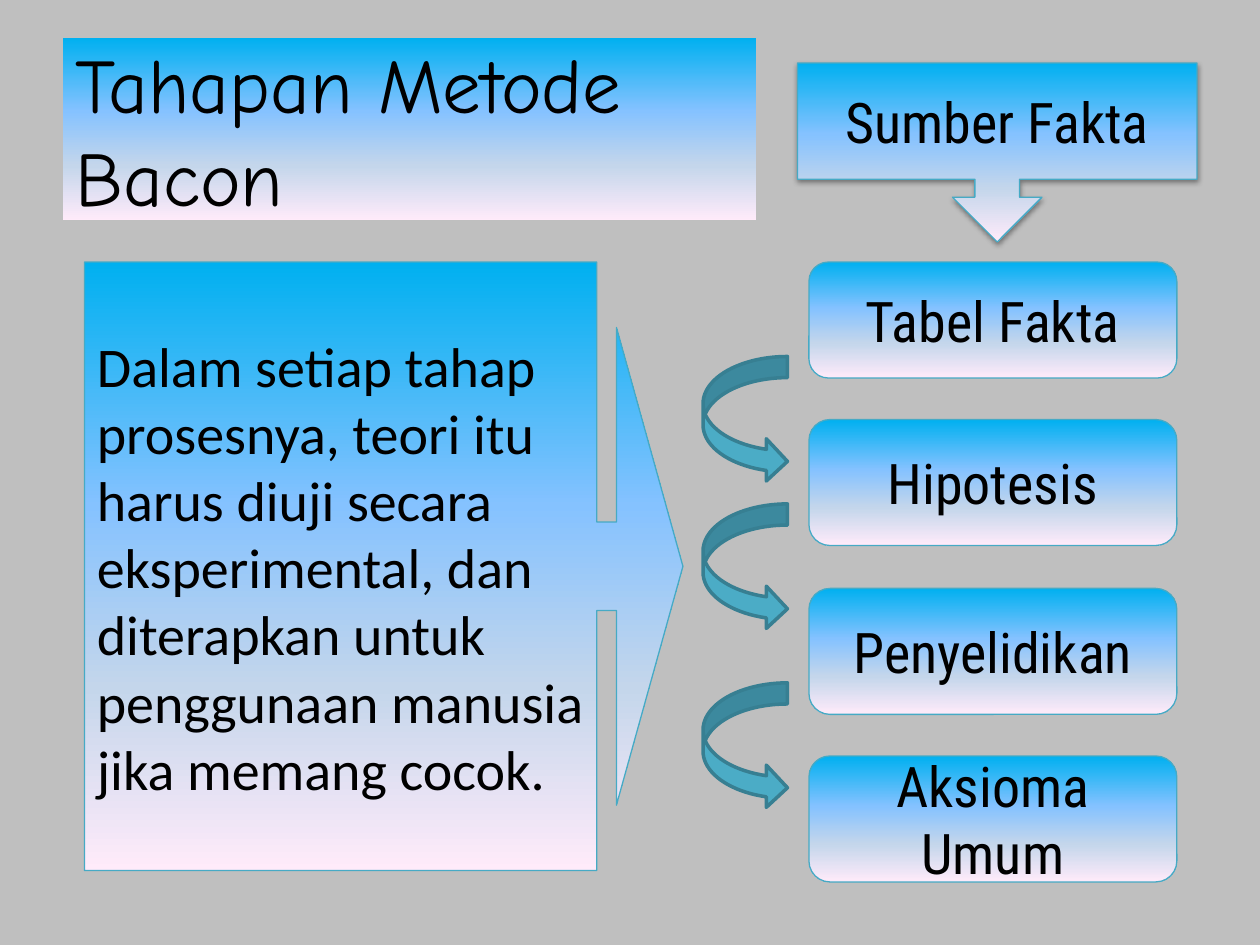
from lxml import etree
from pptx import Presentation
from pptx.dml.color import RGBColor
from pptx.enum.shapes import MSO_SHAPE
from pptx.enum.text import MSO_ANCHOR, MSO_AUTO_SIZE, PP_ALIGN
from pptx.oxml.ns import qn
from pptx.util import Inches, Pt

BOX = MSO_SHAPE.ROUNDED_RECTANGLE
CURVED_ARROW = MSO_SHAPE.CURVED_RIGHT_ARROW
RIGHT_CALLOUT = MSO_SHAPE.RIGHT_ARROW_CALLOUT
DOWN_CALLOUT = MSO_SHAPE.DOWN_ARROW_CALLOUT
LEFT, CENTER = PP_ALIGN.LEFT, PP_ALIGN.CENTER
MIDDLE, NO_FIT = MSO_ANCHOR.MIDDLE, MSO_AUTO_SIZE.NONE

GREY = RGBColor(0xBF, 0xBF, 0xBF)
BLACK = RGBColor(0, 0, 0)
EDGE = RGBColor(0x46, 0xAA, 0xC5)
TEAL = RGBColor(0x4B, 0xAC, 0xC6)
DARK_TEAL = RGBColor(0x37, 0x7F, 0x92)
GRADIENT = [
    (0, RGBColor(0x00, 0xB0, 0xF0)),
    (40, RGBColor(0x85, 0xC2, 0xFF)),
    (70, RGBColor(0xC4, 0xD6, 0xEB)),
    (100, RGBColor(0xFF, 0xEB, 0xFA)),
]

BODY_TEXT = (
    "Dalam setiap tahap prosesnya, teori itu harus diuji secara eksperimental, "
    "dan diterapkan untuk penggunaan manusia jika memang cocok."
)
STAGES = [
    ("Tabel Fakta", 2.08, 0.92),
    ("Hipotesis", 3.33, 1),
    ("Penyelidikan", 4.67, 1),
    ("Aksioma Umum", 6, 1),
]
ARROW_TOPS = [2.83, 4, 5.42]


def add_color(parent, color):
    return etree.SubElement(parent, qn("a:srgbClr"), val=str(color))


class Builder:
    def __init__(self, s, label_font="Roboto Condensed", size=32):
        self.s = s
        self.label_font = label_font
        self.size = size

    def gradient(self, sp):
        """Fill from top to bottom with the four-stop gradient."""
        sp.fill.gradient()
        sp.fill.gradient_angle = 270
        stops = sp._element.spPr.find(".//" + qn("a:gsLst"))
        for stop in list(stops):
            stops.remove(stop)
        for pos, color in GRADIENT:
            add_color(etree.SubElement(stops, qn("a:gs"), pos=str(pos * 1000)), color)

    def shadow(self, sp):
        effects = sp._element.spPr.find(qn("a:effectLst"))
        outer = etree.SubElement(effects, qn("a:outerShdw"), blurRad=str(Pt(3.1)),
                                 dist=str(Pt(1.6)), dir="5400000", rotWithShape="0")
        etree.SubElement(add_color(outer, BLACK), qn("a:alpha"), val="38000")

    def text(self, sp, text, font, size, align):
        tf = sp.text_frame
        tf.word_wrap = True
        tf.auto_size = NO_FIT
        tf.vertical_anchor = MIDDLE
        p = tf.paragraphs[0]
        p.alignment = align
        r = p.add_run()
        r.text = text
        r.font.name = font
        r.font.size = Pt(size)
        r.font.color.rgb = BLACK

    def shape(self, kind, x, y, w, h, line, width):
        sp = self.s.shapes.add_shape(kind, Inches(x), Inches(y), Inches(w), Inches(h))
        sp.shadow.inherit = False
        sp.line.color.rgb = line
        sp.line.width = Pt(width)
        return sp

    def title(self, text, x, y, w, h):
        sp = self.s.shapes.title
        sp.left, sp.top, sp.width, sp.height = (Inches(v) for v in (x, y, w, h))
        self.gradient(sp)
        self.text(sp, text, "Comic Neue", 44, LEFT)

    def panel(self, kind, text, x, y, w, h, font=None, align=CENTER):
        sp = self.shape(kind, x, y, w, h, EDGE, 0.75)
        self.gradient(sp)
        self.text(sp, text, font or self.label_font, self.size, align)
        return sp

    def curved_arrow(self, x, y, w, h):
        sp = self.shape(CURVED_ARROW, x, y, w, h, DARK_TEAL, 2)
        sp.fill.solid()
        sp.fill.fore_color.rgb = TEAL


def main():
    prs = Presentation()
    prs.slide_width, prs.slide_height = Inches(10), Inches(7.5)
    s = prs.slides.add_slide(prs.slide_layouts[5])
    s.background.fill.solid()
    s.background.fill.fore_color.rgb = GREY

    b = Builder(s)
    b.title("Tahapan Metode Bacon", 0.5, 0.3, 5.5, 1.45)
    body = b.panel(RIGHT_CALLOUT, BODY_TEXT, 0.67, 2.08, 4.75, 4.83, "Calibri", LEFT)
    for i, value in enumerate([0.148, 0.399, 0.111, 0.856]):
        body.adjustments[i] = value
    for name, top, height in STAGES:
        b.panel(BOX, name, 6.42, top, 2.92, height)
    for top in ARROW_TOPS:
        b.curved_arrow(5.58, top, 0.67, 1)
    b.shadow(b.panel(DOWN_CALLOUT, "Sumber Fakta", 6.33, 0.5, 3.17, 1.42))

    prs.save("out.pptx")


if __name__ == "__main__":
    main()
